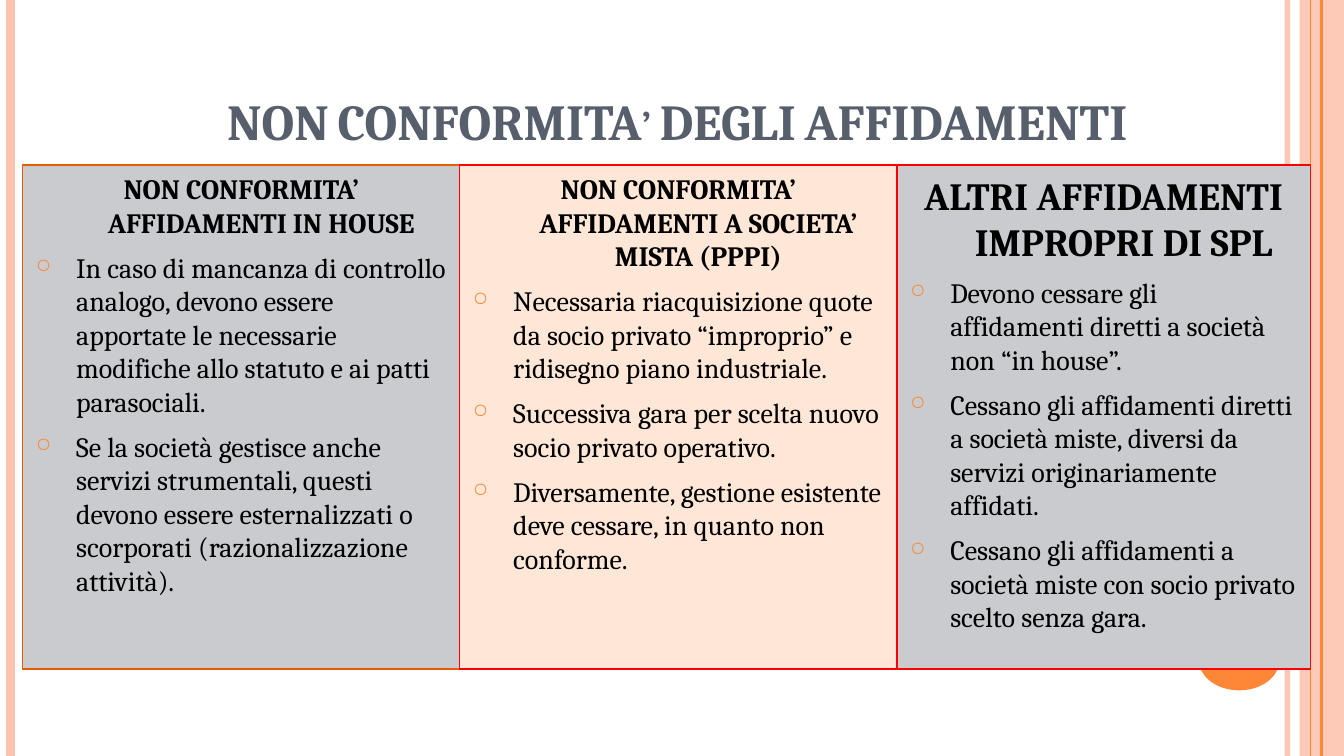
"""Builds a slide comparing three kinds of non-compliant service awards."""
from dataclasses import dataclass
from typing import Optional

import lxml.etree
import pptx
import pptx.dml.color
import pptx.enum.shapes
import pptx.enum.text
import pptx.oxml.ns
import pptx.util

Cm = pptx.util.Cm
Pt = pptx.util.Pt
RGBColor = pptx.dml.color.RGBColor
Align = pptx.enum.text.PP_ALIGN
Anchor = pptx.enum.text.MSO_ANCHOR
Shape = pptx.enum.shapes.MSO_SHAPE
qn = pptx.oxml.ns.qn

FONT = "Cambria"
ORANGE = RGBColor(0xFE, 0x86, 0x37)
PEACH = RGBColor(0xFE, 0xC3, 0xAE)
DARK_ORANGE = RGBColor(0xE7, 0x5C, 0x01)
RED = RGBColor(0xFF, 0x00, 0x00)
GREY = RGBColor(0xC9, 0xCB, 0xCE)
CREAM = RGBColor(0xFF, 0xE7, 0xD7)
SLATE = RGBColor(0x57, 0x5F, 0x6D)
BLACK = RGBColor(0x00, 0x00, 0x00)
SLIDE_WIDTH, SLIDE_HEIGHT = 25.4, 14.29
PANEL_LEFT, PANEL_TOP, PANEL_STEP, PANEL_HEIGHT = 0.43, 3.12, 8.26, 9.53


@dataclass
class Stripe:
    x: float
    color: RGBColor
    weight: float
    opacity: int = 100


@dataclass
class Panel:
    heading: str
    points: list[str]
    fill: RGBColor
    border: RGBColor
    width: float = PANEL_STEP
    heading_size: float = 15


STRIPES = [
    Stripe(24.33, PEACH, 3, 93),
    Stripe(0.2, PEACH, 4.5),
    Stripe(24.97, ORANGE, 1.5),
    Stripe(24.77, ORANGE, 0.75),
]
PANELS = [
    Panel("NON CONFORMITA’ AFFIDAMENTI IN HOUSE", [
        "In caso di mancanza di controllo analogo, devono essere apportate le necessarie "
        "modifiche allo statuto e ai patti parasociali.",
        "Se la società gestisce anche servizi strumentali, questi devono essere "
        "esternalizzati o scorporati (razionalizzazione attività).",
    ], GREY, DARK_ORANGE),
    Panel("NON CONFORMITA’ AFFIDAMENTI A SOCIETA’ MISTA (PPPI)", [
        "Necessaria riacquisizione quote da socio privato “improprio” e ridisegno "
        "piano industriale.",
        "Successiva gara per scelta nuovo socio privato operativo.",
        "Diversamente, gestione esistente deve cessare, in quanto non conforme.",
    ], CREAM, RED),
    Panel("ALTRI AFFIDAMENTI IMPROPRI DI SPL", [
        "Devono cessare gli affidamenti diretti a società non “in house”.",
        "Cessano gli affidamenti diretti a società miste, diversi da servizi "
        "originariamente affidati.",
        "Cessano gli affidamenti a società miste con socio privato scelto senza gara.",
    ], GREY, RED, width=7.82, heading_size=20.6),
]


def set_opacity(element, percent: int) -> None:
    for color in element.spPr.iter(qn("a:srgbClr")):
        lxml.etree.SubElement(color, qn("a:alpha"), val=str(percent * 1000))


def add_stripe(slide, stripe: Stripe) -> None:
    line = slide.shapes.add_connector(
        pptx.enum.shapes.MSO_CONNECTOR.STRAIGHT,
        Cm(stripe.x), Cm(0), Cm(stripe.x), Cm(SLIDE_HEIGHT))
    line.line.color.rgb = stripe.color
    line.line.width = Pt(stripe.weight)
    if stripe.opacity < 100:
        set_opacity(line._element, stripe.opacity)
    lxml.etree.SubElement(line._element.spPr, qn("a:effectLst"))


def add_block(slide, kind, left: float, top: float, width: float, height: float,
              fill: RGBColor, border: Optional[RGBColor] = None):
    block = slide.shapes.add_shape(kind, Cm(left), Cm(top), Cm(width), Cm(height))
    block.shadow.inherit = False
    block.fill.solid()
    block.fill.fore_color.rgb = fill
    if border is None:
        block.line.fill.background()
    else:
        block.line.color.rgb = border
        block.line.width = Pt(0.75)
    return block


def write(paragraph, text: str, *, size: float = 15, color: RGBColor = BLACK,
          bold: bool = False, align=Align.LEFT, before: float = 0,
          hanging: float = 0, bullet: str = "", small_caps: bool = False) -> None:
    paragraph.alignment = align
    paragraph.space_before = Pt(before)
    properties = paragraph._p.get_or_add_pPr()
    if hanging:
        properties.set("marL", str(Cm(hanging)))
        properties.set("indent", str(-Cm(hanging)))
    if bullet:
        bullet_color = lxml.etree.SubElement(properties, qn("a:buClr"))
        lxml.etree.SubElement(bullet_color, qn("a:srgbClr"), val=str(ORANGE))
        lxml.etree.SubElement(properties, qn("a:buSzPct"), val="70000")
        lxml.etree.SubElement(properties, qn("a:buChar"), char=bullet)
    run = paragraph.add_run()
    run.text = text
    run.font.name = FONT
    run.font.size = Pt(size)
    run.font.bold = bold
    run.font.color.rgb = color
    if small_caps:
        run._r.get_or_add_rPr().set("cap", "small")


def add_panel(slide, panel: Panel, left: float) -> None:
    block = add_block(slide, Shape.RECTANGLE, left, PANEL_TOP, panel.width, PANEL_HEIGHT,
                      panel.fill, panel.border)
    frame = block.text_frame
    frame.word_wrap = True
    frame.vertical_anchor = Anchor.TOP
    write(frame.paragraphs[0], panel.heading, size=panel.heading_size, bold=True,
          align=Align.CENTER, before=6, hanging=0.76)
    for point in panel.points:
        write(frame.add_paragraph(), point, before=6, hanging=0.76, bullet="○")


def add_title(slide, text: str) -> None:
    title = slide.shapes.add_textbox(Cm(1.27), Cm(0.58), Cm(23.06), Cm(2.39))
    title.text_frame.word_wrap = True
    title.text_frame.vertical_anchor = Anchor.BOTTOM
    write(title.text_frame.paragraphs[0], text, size=27, color=SLATE, bold=True,
          align=Align.CENTER, small_caps=True)


def main() -> None:
    deck = pptx.Presentation()
    deck.slide_width, deck.slide_height = Cm(SLIDE_WIDTH), Cm(SLIDE_HEIGHT)
    slide = deck.slides.add_slide(deck.slide_layouts[6])
    band = add_block(slide, Shape.RECTANGLE, 24.56, 0, 0.84, SLIDE_HEIGHT, PEACH)
    set_opacity(band._element, 87)
    for stripe in STRIPES:
        add_stripe(slide, stripe)
    add_block(slide, Shape.OVAL, 22.66, 11.91, 1.52, 1.14, ORANGE)
    add_title(slide, "NON CONFORMITA’ DEGLI AFFIDAMENTI")
    for index, panel in enumerate(PANELS):
        add_panel(slide, panel, PANEL_LEFT + index * PANEL_STEP)
    deck.save("out.pptx")


if __name__ == "__main__":
    main()
